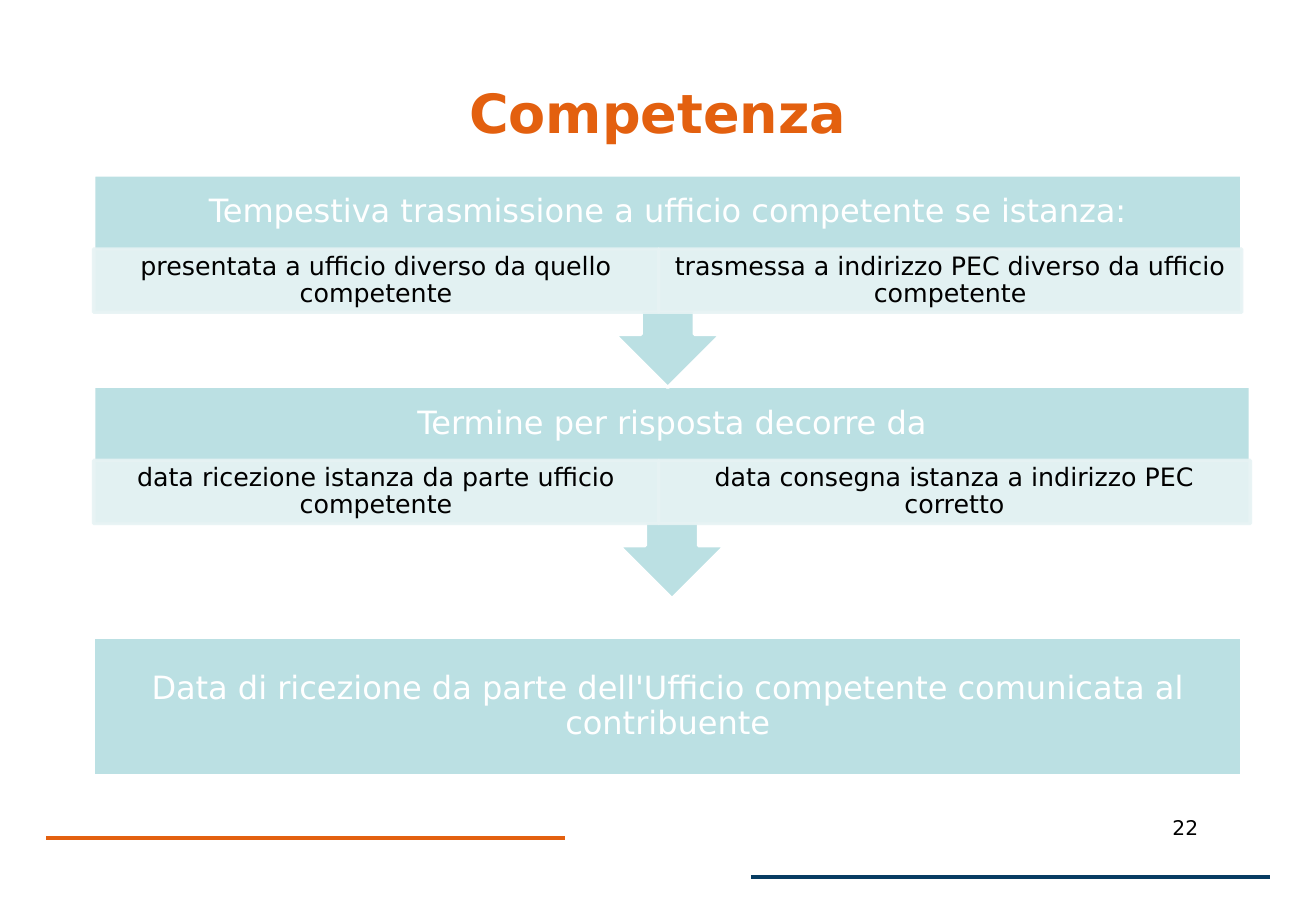
"""Build the Competenza slide: two callout steps that lead to a final box."""
from dataclasses import dataclass

from lxml import etree
from pptx import Presentation
from pptx import util as u
from pptx.dml.color import RGBColor
from pptx.enum import shapes as sh, text as tx
from pptx.oxml import ns


@dataclass(frozen=True)
class Theme:
    font: str = "DejaVu Sans"
    orange: str = "E3600F"
    navy: str = "073C62"
    teal: str = "BBE0E3"
    pale: str = "E7F3F4"
    white: str = "FFFFFF"
    black: str = "000000"
    title: int = 32
    head: int = 19
    cell: int = 15
    page: int = 12
    rule: int = 2


@dataclass(frozen=True)
class Step:
    top: float
    wide: float
    head: str
    cells: tuple[str, str]


@dataclass(frozen=True)
class Rule:
    left: float
    top: float
    color: str


T = Theme()
LEFT, HALF = 0.77, 4.65
BAND, CELL, CALL = 0.61, 0.52, 1.75
STEPS = (
    Step(1.44, 9.45, "Tempestiva trasmissione a ufficio competente se istanza:",
         ("presentata a ufficio diverso da quello competente",
          "trasmessa a indirizzo PEC diverso da ufficio competente")),
    Step(3.18, 9.52, "Termine per risposta decorre da",
         ("data ricezione istanza da parte ufficio competente",
          "data consegna istanza a indirizzo PEC corretto")),
)
RULES = (Rule(0.38, 6.9, T.orange), Rule(6.18, 7.22, T.navy))


def write(shape, words: str, *, size: int, color: str, bold: bool = False,
          pad: tuple = (0.1, 0.05, 0.1, 0.05), space: float = 1.0,
          anchor=tx.MSO_ANCHOR.MIDDLE) -> None:
    frame = shape.text_frame
    frame.word_wrap = True
    frame.vertical_anchor = anchor
    (frame.margin_left, frame.margin_top,
     frame.margin_right, frame.margin_bottom) = map(u.Inches, pad)
    para = frame.paragraphs[0]
    para.alignment = tx.PP_ALIGN.CENTER
    para.line_spacing = space
    run = para.add_run()
    run.text = words
    run.font.name = T.font
    run.font.size = u.Pt(size)
    run.font.bold = bold
    run.font.color.rgb = RGBColor.from_string(color)


def block(slide, kind, box: tuple, fill: str, edge: str, alpha: int = 100):
    shape = slide.shapes.add_shape(kind, *map(u.Inches, box))
    shape.shadow.inherit = False
    shape.fill.solid()
    shape.fill.fore_color.rgb = RGBColor.from_string(fill)
    shape.line.color.rgb = RGBColor.from_string(edge)
    shape.line.width = u.Pt(T.rule)
    if alpha < 100:
        for tint in shape._element.spPr.iter(ns.qn("a:srgbClr")):
            etree.SubElement(tint, ns.qn("a:alpha"), val=str(alpha * 1000))
    return shape


def draw_rule(slide, rule: Rule) -> None:
    ends = (rule.left, rule.top, rule.left + 4.27, rule.top)
    line = slide.shapes.add_connector(sh.MSO_CONNECTOR.STRAIGHT, *map(u.Inches, ends))
    line.line.color.rgb = RGBColor.from_string(rule.color)
    line.line.width = u.Pt(T.rule)
    etree.SubElement(line._element.spPr, ns.qn("a:effectLst"))


def draw_step(slide, step: Step) -> None:
    call = block(slide, sh.MSO_SHAPE.DOWN_ARROW_CALLOUT,
                 (LEFT, step.top, step.wide, CALL), T.teal, T.white)
    write(call, step.head, size=T.head, color=T.white, space=0.9,
          pad=(0.15, 0.15, 0.15, 0.15 + CELL))
    wides = (HALF, step.wide - HALF)
    for left, wide, words in zip((LEFT, LEFT + HALF), wides, step.cells):
        cell = block(slide, sh.MSO_SHAPE.RECTANGLE,
                     (left, step.top + BAND, wide, CELL), T.pale, T.pale, 90)
        write(cell, words, size=T.cell, color=T.black, space=0.9,
              pad=(0.12, 0.02, 0.12, 0.02))


def main() -> None:
    deck = Presentation()
    deck.slide_width, deck.slide_height = u.Inches(10.83), u.Inches(7.5)
    slide = deck.slides.add_slide(deck.slide_layouts[5])
    for rule in RULES:
        draw_rule(slide, rule)

    title = slide.shapes.title
    title.left, title.top = u.Inches(0.54), u.Inches(0.3)
    title.width, title.height = u.Inches(9.75), u.Inches(1.25)
    write(title, "Competenza", size=T.title, color=T.orange, bold=True)

    page = slide.shapes.add_textbox(*map(u.Inches, (9.28, 6.66, 0.95, 0.39)))
    write(page, "22", size=T.page, color=T.black, anchor=tx.MSO_ANCHOR.TOP)

    last = block(slide, sh.MSO_SHAPE.RECTANGLE, (LEFT, 5.25, 9.45, 1.14), T.teal, T.white)
    write(last, "Data di ricezione da parte dell'Ufficio competente comunicata al contribuente",
          size=T.head, color=T.white, space=0.9, pad=(0.15,) * 4)
    for step in reversed(STEPS):
        draw_step(slide, step)
    deck.save("out.pptx")


if __name__ == "__main__":
    main()
